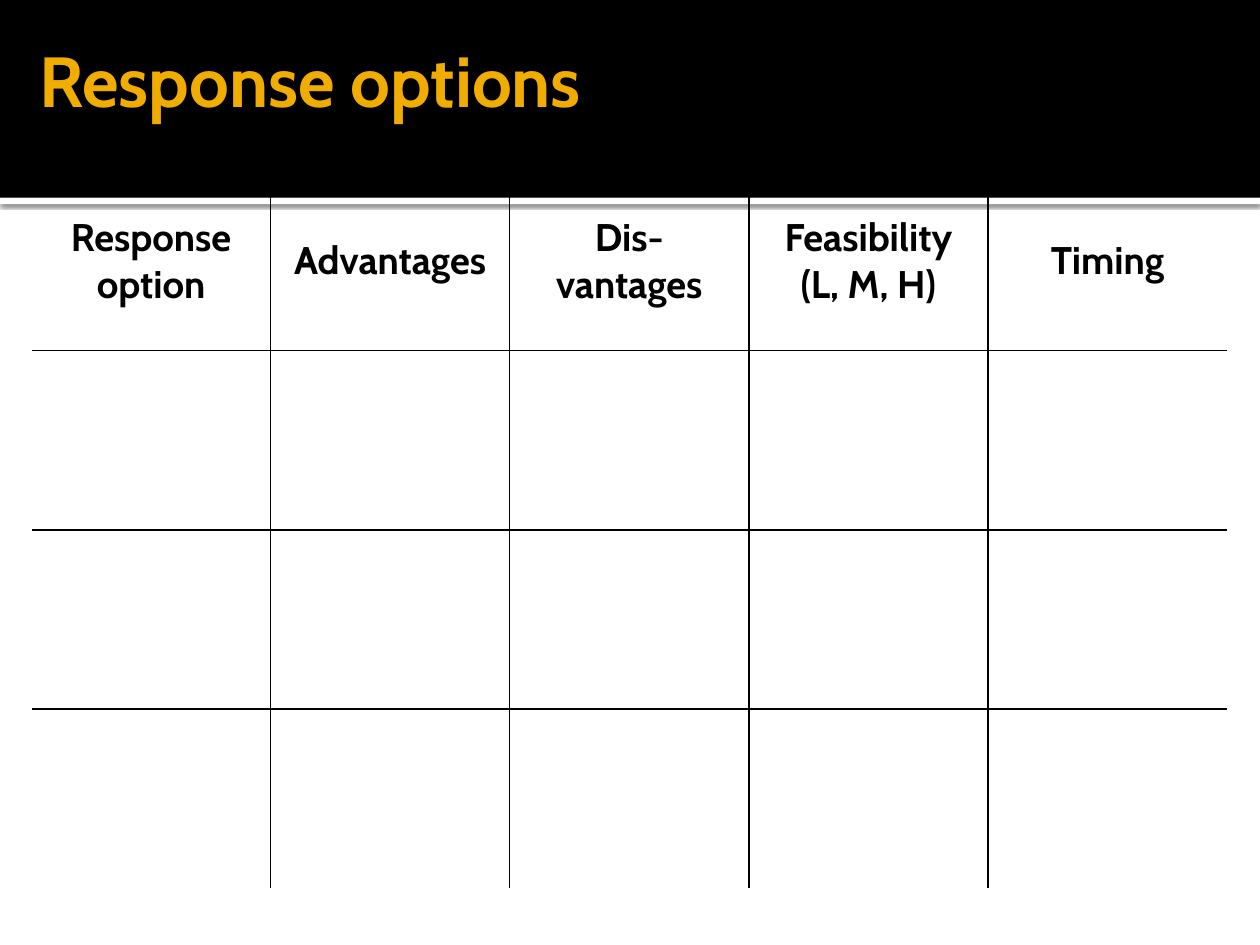
"""Build the response options slide with an empty comparison table."""
from lxml import etree
from pptx import Presentation
from pptx.dml.color import RGBColor
from pptx.enum.shapes import MSO_SHAPE
from pptx.enum.text import MSO_ANCHOR, PP_ALIGN
from pptx.oxml.ns import qn
from pptx.util import Inches, Pt

RECTANGLE = MSO_SHAPE.RECTANGLE
MIDDLE = MSO_ANCHOR.MIDDLE
LEFT, CENTER = PP_ALIGN.LEFT, PP_ALIGN.CENTER

BLACK = RGBColor(0x00, 0x00, 0x00)
WHITE = RGBColor(0xFF, 0xFF, 0xFF)
AMBER = RGBColor(0xF0, 0xAD, 0x00)
FONT = "Cabin"

TITLE = "Response options"
HEADERS = [
    ["Response option"],
    ["Advantages"],
    ["Dis-vantages"],
    ["Feasibility", "(L, M, H)"],
    ["Timing"],
]
ROW_COUNT = 4
TABLE_BOX = (0.25, 1.36, 9.49, 5.69)
TITLE_BOX = (0.21, 0.25, 9.53, 0.75)
STRIP_BOX = (0, 1.57, 10, 0.05)
BAND_BOX = (0, 0, 10, 1.57)


def add_text(paragraph, text, size, color, alignment):
    paragraph.alignment = alignment
    run = paragraph.add_run()
    run.text = text
    run.font.name = FONT
    run.font.size = Pt(size)
    run.font.bold = True
    run.font.color.rgb = color


def add_bar(slide, box, color):
    bar = slide.shapes.add_shape(RECTANGLE, *map(Inches, box))
    bar.shadow.inherit = False
    bar.fill.solid()
    bar.fill.fore_color.rgb = color
    bar.line.fill.background()
    slide.shapes.title.element.addprevious(bar.element)
    return bar


def add_drop_shadow(shape):
    effects = shape.element.spPr.find(qn("a:effectLst"))
    shadow = etree.SubElement(
        effects, qn("a:outerShdw"), blurRad=str(Pt(2.5)), dist=str(Pt(0.8)),
        dir="5400000", algn="tl", rotWithShape="0")
    color = etree.SubElement(shadow, qn("a:srgbClr"), val=str(BLACK))
    etree.SubElement(color, qn("a:alpha"), val="60000")


def set_borders(cell, visible_sides):
    properties = cell._tc.get_or_add_tcPr()
    for side in "LRTB":
        line = etree.SubElement(properties, qn(f"a:ln{side}"), w=str(Pt(1)))
        if side in visible_sides:
            fill = etree.SubElement(line, qn("a:solidFill"))
            etree.SubElement(fill, qn("a:srgbClr"), val=str(BLACK))
        else:
            etree.SubElement(line, qn("a:noFill"))


def add_title(slide):
    title = slide.shapes.title
    title.left, title.top, title.width, title.height = map(Inches, TITLE_BOX)
    frame = title.text_frame
    frame.word_wrap = True
    frame.vertical_anchor = MIDDLE
    frame.margin_left = Inches(0.1)
    frame.margin_right = frame.margin_top = frame.margin_bottom = Inches(0.05)
    add_text(frame.paragraphs[0], TITLE, 40.5, AMBER, LEFT)


def add_options_table(slide):
    column_count = len(HEADERS)
    table = slide.shapes.add_table(
        ROW_COUNT, column_count, *map(Inches, TABLE_BOX)).table
    table.first_row = False
    table.horz_banding = False
    for row in range(ROW_COUNT):
        for column in range(column_count):
            cell = table.cell(row, column)
            inner = {"L": column > 0, "R": column < column_count - 1,
                     "T": row > 0, "B": row < ROW_COUNT - 1}
            set_borders(cell, [side for side in inner if inner[side]])
            cell.fill.background()
    for column, lines in enumerate(HEADERS):
        cell = table.cell(0, column)
        cell.vertical_anchor = MIDDLE
        frame = cell.text_frame
        for index, text in enumerate(lines):
            paragraph = frame.add_paragraph() if index else frame.paragraphs[0]
            add_text(paragraph, text, 22, BLACK, CENTER)


def main():
    presentation = Presentation()
    presentation.slide_width = Inches(10)
    presentation.slide_height = Inches(7.5)
    slide = presentation.slides.add_slide(presentation.slide_layouts[5])
    slide.background.fill.solid()
    slide.background.fill.fore_color.rgb = WHITE
    add_drop_shadow(add_bar(slide, STRIP_BOX, WHITE))
    add_bar(slide, BAND_BOX, BLACK)
    add_title(slide)
    add_options_table(slide)
    presentation.save("out.pptx")


if __name__ == "__main__":
    main()
